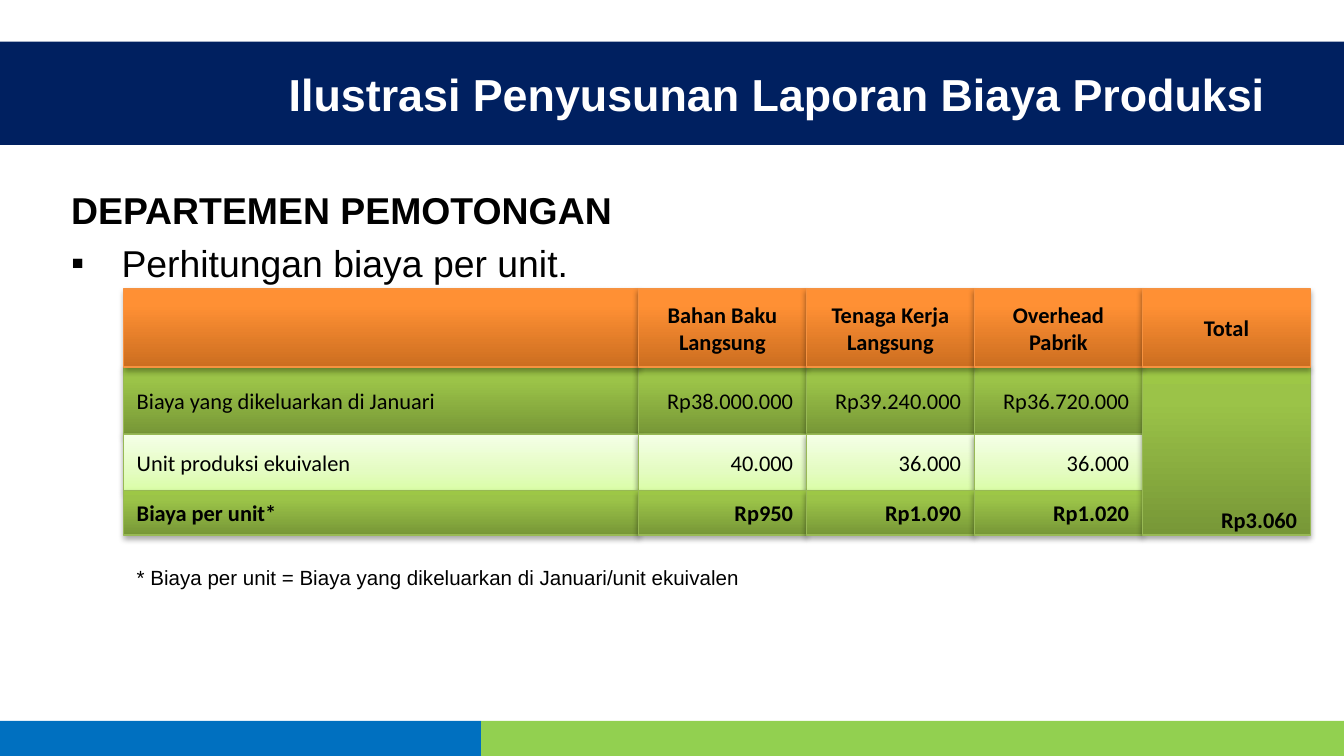
from dataclasses import dataclass

from lxml.etree import SubElement
from pptx import Presentation
from pptx.dml.color import RGBColor
from pptx.enum.shapes import MSO_SHAPE as Preset
from pptx.enum.text import MSO_ANCHOR as Anchor, MSO_AUTO_SIZE as AutoSize, PP_ALIGN as Align
from pptx.oxml.ns import qn
from pptx.util import Pt

BLACK = RGBColor(0x00, 0x00, 0x00)
WHITE = RGBColor(0xFF, 0xFF, 0xFF)
NAVY = RGBColor(0x00, 0x20, 0x60)
BLUE = RGBColor(0x00, 0x70, 0xC0)
LIME = RGBColor(0x92, 0xD0, 0x50)
ORANGE_EDGE = RGBColor(0xF6, 0x92, 0x40)
GREEN_EDGE = RGBColor(0x98, 0xB9, 0x55)


@dataclass(frozen=True)
class Style:
    stops: tuple[tuple[int, RGBColor], ...]
    edge: RGBColor
    shadow_percent: int = 35
    shadow_distance: float = 1.8


@dataclass(frozen=True)
class Row:
    top: float
    height: float
    texts: tuple[str, ...]
    style: Style
    bold: bool = False


ORANGE = Style(((0, RGBColor(0xCC, 0x6E, 0x20)), (80, RGBColor(0xFF, 0x90, 0x34)),
                (100, RGBColor(0xFF, 0x91, 0x36))), ORANGE_EDGE)
GREEN = Style(((0, RGBColor(0x77, 0x97, 0x37)), (80, RGBColor(0x9B, 0xC3, 0x48)),
               (100, RGBColor(0x9D, 0xC7, 0x46))), GREEN_EDGE)
PALE = Style(((0, RGBColor(0xDA, 0xFD, 0xA7)), (35, RGBColor(0xE4, 0xFC, 0xC2)),
              (100, RGBColor(0xF5, 0xFF, 0xE7))), GREEN_EDGE, 38, 1.6)

TABLE_LEFT, LABEL_WIDTH, VALUE_WIDTH = 66.2, 275.8, 90
BODY_TOP, BODY_HEIGHT = 196.6, 90

HEADER = Row(154.8, 41.8, ("", "Bahan Baku Langsung", "Tenaga Kerja Langsung",
                           "Overhead Pabrik", "Total"), ORANGE, True)
BODY = (
    Row(BODY_TOP, 36, ("Biaya yang dikeluarkan di Januari", "Rp38.000.000",
                       "Rp39.240.000", "Rp36.720.000"), GREEN),
    Row(232.6, 30.2, ("Unit produksi ekuivalen", "40.000", "36.000", "36.000"), PALE),
    Row(262.8, 23.8, ("Biaya per unit*", "Rp950", "Rp1.090", "Rp1.020"), GREEN, True),
)


def column_span(column: int) -> tuple[float, float]:
    """Return the left edge and width of a column."""
    if column == 0:
        return TABLE_LEFT, LABEL_WIDTH
    return TABLE_LEFT + LABEL_WIDTH + (column - 1) * VALUE_WIDTH, VALUE_WIDTH


def set_font(para, name: str, size: float, color: RGBColor, bold: bool = False) -> None:
    font = para.font
    font.name, font.size, font.bold = name, Pt(size), bold
    font.color.rgb = color


def add_rectangle(page, left: float, top: float, width: float, height: float):
    box = page.shapes.add_shape(Preset.RECTANGLE, Pt(left), Pt(top), Pt(width), Pt(height))
    box.shadow.inherit = False
    return box


def add_bar(page, left: float, top: float, width: float, height: float, color: RGBColor) -> None:
    bar = add_rectangle(page, left, top, width, height)
    bar.fill.solid()
    bar.fill.fore_color.rgb = color
    bar.line.fill.background()


def apply_style(box, style: Style) -> None:
    """Give a cell its outline, upward gradient and soft shadow."""
    box.line.color.rgb = style.edge
    box.line.width = Pt(0.75)
    properties = box._element.spPr
    gradient = SubElement(properties, qn("a:gradFill"), rotWithShape="1")
    stops = SubElement(gradient, qn("a:gsLst"))
    for percent, color in style.stops:
        stop = SubElement(stops, qn("a:gs"), pos=str(percent * 1000))
        SubElement(stop, qn("a:srgbClr"), val=str(color))
    SubElement(gradient, qn("a:lin"), ang="16200000", scaled="0")
    properties.find(qn("a:ln")).addprevious(gradient)
    shadow = SubElement(properties.find(qn("a:effectLst")), qn("a:outerShdw"),
                        blurRad=str(Pt(3.1)), dist=str(Pt(style.shadow_distance)),
                        dir="5400000", rotWithShape="0")
    tint = SubElement(shadow, qn("a:srgbClr"), val=str(BLACK))
    SubElement(tint, qn("a:alpha"), val=str(style.shadow_percent * 1000))


def add_cell(page, column: int, top: float, height: float, text: str, style: Style,
             align: Align, bold: bool):
    left, width = column_span(column)
    box = add_rectangle(page, left, top, width, height)
    apply_style(box, style)
    box.text_frame.word_wrap = True
    box.text_frame.vertical_anchor = Anchor.MIDDLE
    if text:
        para = box.text_frame.paragraphs[0]
        para.text, para.alignment = text, align
        set_font(para, "Calibri", 12, BLACK, bold)
    return box


def add_row(page, row: Row, value_align: Align) -> None:
    for column, text in enumerate(row.texts):
        align = value_align if column else Align.LEFT
        add_cell(page, column, row.top, row.height, text, row.style, align, row.bold)


def add_text_box(page, left: float, top: float, width: float, height: float):
    box = page.shapes.add_textbox(Pt(left), Pt(top), Pt(width), Pt(height))
    box.text_frame.word_wrap = True
    return box.text_frame


def add_title(page, text: str) -> None:
    title = page.shapes.title
    title.left, title.top, title.width, title.height = Pt(119.5), Pt(22.3), Pt(565.2), Pt(55.4)
    frame = title.text_frame
    frame.text = text
    frame.word_wrap = True
    frame.auto_size = AutoSize.NONE
    frame.vertical_anchor = Anchor.MIDDLE
    para = frame.paragraphs[0]
    para.alignment = Align.RIGHT
    set_font(para, "Arial", 24, WHITE, True)
    page.shapes._spTree.append(title._element)  # in front of the navy bar


def add_intro(page) -> None:
    frame = add_text_box(page, 31, 97, 653.8, 53.3)
    heading = frame.paragraphs[0]
    heading.text = "DEPARTEMEN PEMOTONGAN"
    set_font(heading, "Arial", 20, BLACK, True)

    point = frame.add_paragraph()
    point.text = "Perhitungan biaya per unit."
    properties = point._p.get_or_add_pPr()
    properties.set("marL", str(Pt(27)))
    properties.set("indent", str(-Pt(27)))
    SubElement(properties, qn("a:buFont"), typeface="Arial")
    SubElement(properties, qn("a:buChar"), char="▪")
    point.space_before = Pt(4)
    set_font(point, "Arial", 20, BLACK)


def main() -> None:
    deck = Presentation()
    deck.slide_width, deck.slide_height = Pt(720), Pt(405)
    page = deck.slides.add_slide(deck.slide_layouts[5])

    add_bar(page, 0, 386.2, 257.8, 18.8, BLUE)
    add_bar(page, 257.8, 386.2, 462.2, 18.8, LIME)
    add_bar(page, 0, 22.3, 720, 55.4, NAVY)
    add_title(page, "Ilustrasi Penyusunan Laporan Biaya Produksi")
    add_intro(page)

    for row in BODY:
        add_row(page, row, Align.RIGHT)
    total = add_cell(page, 4, BODY_TOP, BODY_HEIGHT, "Rp3.060", GREEN, Align.RIGHT, True)
    total.text_frame.vertical_anchor = Anchor.BOTTOM
    total.text_frame.margin_bottom = Pt(1)
    add_row(page, HEADER, Align.CENTER)

    note = add_text_box(page, TABLE_LEFT, 299, 623.5, 53.3).paragraphs[0]
    note.text = "* Biaya per unit = Biaya yang dikeluarkan di Januari/unit ekuivalen"
    set_font(note, "Arial", 11, BLACK)

    deck.save("out.pptx")


if __name__ == "__main__":
    main()
